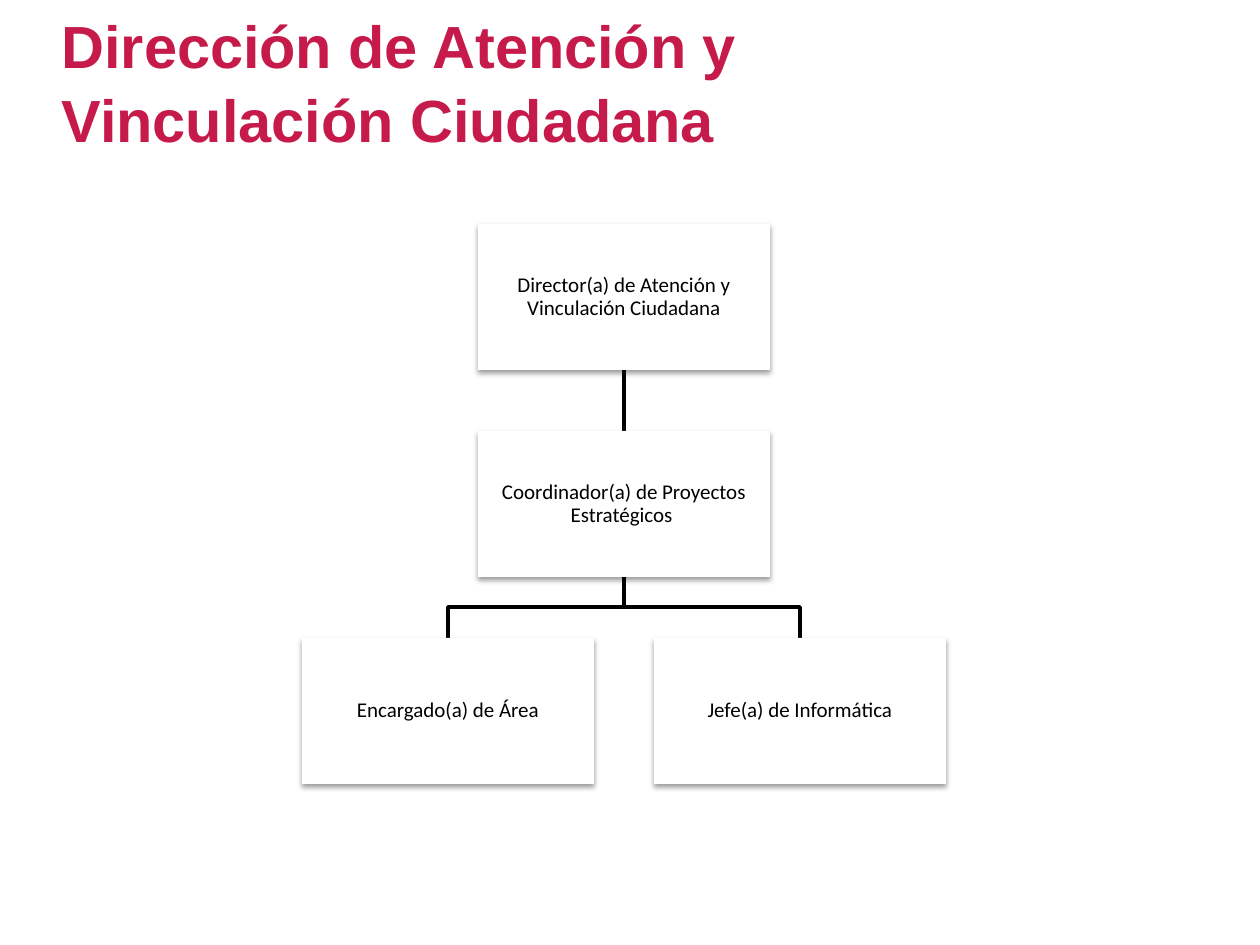
from dataclasses import dataclass

from lxml import etree
from pptx import Presentation, util as u
from pptx.dml.color import RGBColor
from pptx.enum import shapes, text
from pptx.oxml.ns import qn


@dataclass(frozen=True)
class Theme:
    title: RGBColor = RGBColor(0xC5, 0x1A, 0x4A)
    ink: RGBColor = RGBColor(0, 0, 0)
    paper: RGBColor = RGBColor(0xFF, 0xFF, 0xFF)
    title_font: str = "Arial"
    box_font: str = "Calibri"
    title_size: int = 34
    box_size: int = 12
    line: int = 2


T = Theme()
BOX_W, BOX_H = 292, 146
CENTER, TOP = 624, 224
GAP = 61
BRANCH = 176
CHART = [
    [(0, "Director(a) de Atención y Vinculación Ciudadana")],
    [(0, "Coordinador(a) de Proyectos Estratégicos ")],
    [(-BRANCH, "Encargado(a) de Área"), (BRANCH, "Jefe(a) de Informática")],
]


def px(n):
    """Turn whole pixels into EMU."""
    return u.Emu(round(n * 914400 / 126))


def style(p, font, size, color, bold=False):
    """Format the runs of a paragraph."""
    for r in p.runs:
        r.font.name, r.font.size, r.font.bold = font, u.Pt(size), bold
        r.font.color.rgb = color


def add_title(s, words):
    """Place and format the slide title."""
    sp = s.shapes.title
    sp.left, sp.top, sp.width, sp.height = px(49), px(1), px(806), px(158)
    tf = sp.text_frame
    tf.text = words
    tf.word_wrap = True
    tf.auto_size = text.MSO_AUTO_SIZE.SHAPE_TO_FIT_TEXT
    tf.vertical_anchor = text.MSO_ANCHOR.MIDDLE
    p = tf.paragraphs[0]
    p.alignment = text.PP_ALIGN.LEFT
    p.line_spacing = 1.04
    style(p, T.title_font, T.title_size, T.title, True)


def add_shadow(sp):
    """Give a shape a soft shadow straight below it."""
    sp.shadow.inherit = False
    effects = sp._element.spPr.find(qn("a:effectLst"))
    shadow = etree.SubElement(effects, qn("a:outerShdw"), blurRad=str(u.Pt(3.1)),
                              dist=str(u.Pt(1.6)), dir="5400000", rotWithShape="0")
    color = etree.SubElement(shadow, qn("a:srgbClr"), val=str(T.ink))
    etree.SubElement(color, qn("a:alpha"), val="38000")


def add_box(s, x, y, words):
    """Add a post centred on x with its top at y."""
    sp = s.shapes.add_shape(shapes.MSO_SHAPE.RECTANGLE, px(x - BOX_W // 2), px(y),
                            px(BOX_W), px(BOX_H))
    sp.fill.solid()
    sp.fill.fore_color.rgb = T.paper
    sp.line.fill.background()
    add_shadow(sp)
    tf = sp.text_frame
    tf.text = words
    tf.word_wrap = True
    tf.vertical_anchor = text.MSO_ANCHOR.MIDDLE
    tf.margin_left = tf.margin_right = tf.margin_top = tf.margin_bottom = px(1)
    p = tf.paragraphs[0]
    p.alignment = text.PP_ALIGN.CENTER
    p.line_spacing = 0.9
    style(p, T.box_font, T.box_size, T.ink)


def add_link(s, x, y):
    """Join the post above the gap at y to the one below it at x."""
    if x == CENTER:
        sp = s.shapes.add_connector(shapes.MSO_CONNECTOR.STRAIGHT, px(x), px(y),
                                    px(x), px(y + GAP))
        etree.SubElement(sp._element.spPr, qn("a:effectLst"))
    else:
        mid = px(y + GAP // 2)
        path = s.shapes.build_freeform(px(CENTER), px(y))
        path.add_line_segments([(px(CENTER), mid), (px(x), mid), (px(x), px(y + GAP))],
                               close=False)
        sp = path.convert_to_shape()
        sp.fill.background()
        sp.shadow.inherit = False
    sp.line.color.rgb = T.ink
    sp.line.width = u.Pt(T.line)


def main():
    """Build the organisation chart slide."""
    prs = Presentation()
    prs.slide_width, prs.slide_height = px(1260), px(945)
    s = prs.slides.add_slide(prs.slide_layouts[5])
    add_title(s, "Dirección de Atención y Vinculación Ciudadana")
    posts = [(CENTER + dx, TOP + row * (BOX_H + GAP), words)
             for row, level in enumerate(CHART) for dx, words in level]
    for x, y, _ in posts[1:]:
        add_link(s, x, y - GAP)
    for post in posts:
        add_box(s, *post)
    prs.save("out.pptx")


if __name__ == "__main__":
    main()
